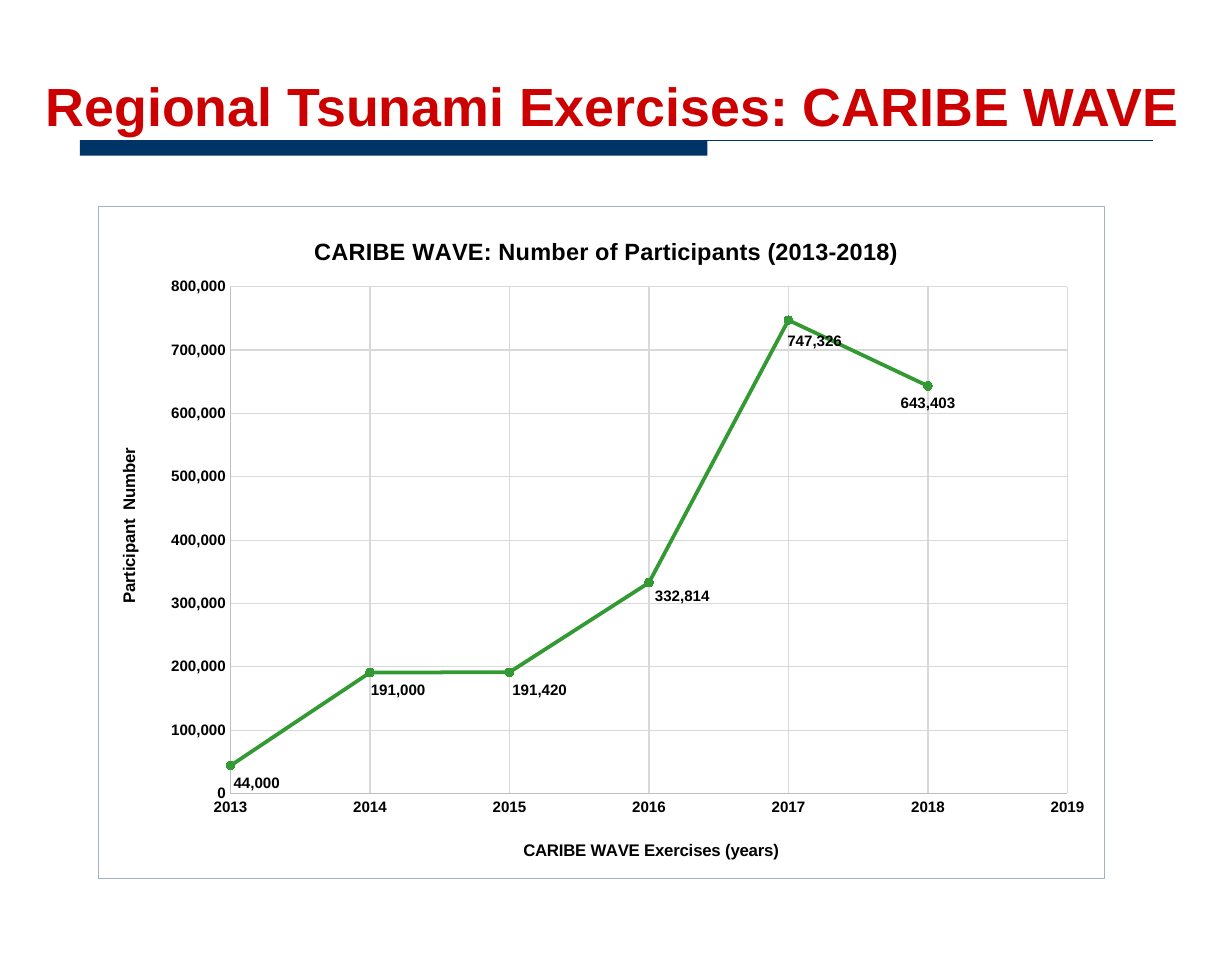
from lxml import etree
from pptx import Presentation
from pptx.chart.data import XyChartData
from pptx.dml.color import RGBColor
from pptx.enum.chart import XL_CHART_TYPE as ChartType, XL_LABEL_POSITION as LabelPosition
from pptx.enum.chart import XL_MARKER_STYLE as MarkerStyle, XL_TICK_MARK as TickMark
from pptx.enum.shapes import MSO_CONNECTOR as Connector, MSO_SHAPE as Shape
from pptx.enum.text import MSO_ANCHOR as Anchor
from pptx.oxml import parse_xml
from pptx.oxml.ns import nsdecls, qn
from pptx.util import Cm, Pt

NAVY, RED, BLACK = "003366", "CC0000", "000000"
GREEN, BRIGHT_GREEN = "339933", "009900"
AXIS_GREY, GRID_GREY, FRAME_GREY = "BFBFBF", "D9D9D9", "A3B2C1"

# year, participants, label shift as a share of the chart, marker colour
EXERCISES = [
    (2013, 44000, (0.026, 0), GREEN),
    (2014, 191000, (0.028, 0), GREEN),
    (2015, 191420, (0.03, 0), BRIGHT_GREEN),
    (2016, 332814, (0.033, -0.006), BRIGHT_GREEN),
    (2017, 747326, (0.026, 0.006), BRIGHT_GREEN),
    (2018, 643403, (0, 0), GREEN),
]


def rgb(value):
    return RGBColor.from_string(value)


def layout_xml(x, y, size=None, edge=True):
    """Manual chart layout in shares of the chart; size also fixes the inner plot area."""
    target = '<c:layoutTarget val="inner"/>' if size else ""
    modes = '<c:xMode val="edge"/><c:yMode val="edge"/>' if edge else ""
    extent = f'<c:w val="{size[0]}"/><c:h val="{size[1]}"/>' if size else ""
    return parse_xml(
        f'<c:layout {nsdecls("c")}><c:manualLayout>{target}{modes}'
        f'<c:x val="{x}"/><c:y val="{y}"/>{extent}</c:manualLayout></c:layout>')


def set_layout(element, position, layout):
    for old in element.findall(qn("c:layout")):
        element.remove(old)
    element.insert(position, layout)


class SlideBuilder:
    font_name = "Arial"

    def __init__(self, slide):
        self.slide = slide

    def style_font(self, font, size, color=BLACK):
        font.name, font.size, font.bold = self.font_name, Pt(size), True
        font.color.rgb = rgb(color)

    def style_line(self, line, color, width=0.75):
        line.color.rgb = rgb(color)
        line.width = Pt(width)

    def heading(self, wording, left, top, width, height):
        box = self.slide.shapes.add_textbox(Cm(left), Cm(top), Cm(width), Cm(height))
        frame = box.text_frame
        frame.word_wrap = True
        frame.vertical_anchor = Anchor.BOTTOM
        paragraph = frame.paragraphs[0]
        paragraph.line_spacing = 1.1
        run = paragraph.add_run()
        run.text = wording
        self.style_font(run.font, 32, RED)

    def bar(self, left, top, width, height):
        bar = self.slide.shapes.add_shape(
            Shape.RECTANGLE, Cm(left), Cm(top), Cm(width), Cm(height))
        bar.shadow.inherit = False
        bar.fill.solid()
        bar.fill.fore_color.rgb = rgb(NAVY)
        bar.line.fill.background()

    def rule(self, left, top, right):
        rule = self.slide.shapes.add_connector(
            Connector.STRAIGHT, Cm(left), Cm(top), Cm(right), Cm(top))
        self.style_line(rule.line, NAVY)
        etree.SubElement(rule._element.spPr, qn("a:effectLst"))

    def chart_title(self, owner, wording, size, x, y, rotation=0):
        """Title of a chart or an axis, with its top left corner at x, y."""
        owner.has_title = True
        title = owner.chart_title if hasattr(owner, "chart_title") else owner.axis_title
        frame = title.text_frame
        run = frame.paragraphs[0].add_run()
        run.text = wording
        self.style_font(run.font, size)
        frame._txBody.bodyPr.set("rot", str(rotation * 60000))
        set_layout(title._element, 1, layout_xml(x, y))

    def axis(self, axis, low, high, step, number_format):
        axis.minimum_scale, axis.maximum_scale, axis.major_unit = low, high, step
        axis.major_tick_mark = axis.minor_tick_mark = TickMark.NONE
        axis.has_major_gridlines = True
        self.style_line(axis.major_gridlines.format.line, GRID_GREY)
        self.style_line(axis.format.line, AXIS_GREY)
        labels = axis.tick_labels
        labels.number_format, labels.number_format_is_linked = number_format, False
        self.style_font(labels.font, 9)

    def marker(self, marker, color):
        marker.style, marker.size = MarkerStyle.CIRCLE, 5
        marker.format.fill.solid()
        marker.format.fill.fore_color.rgb = rgb(color)
        self.style_line(marker.format.line, color)

    def participants_chart(self, left, top, width, height):
        data = XyChartData(number_format="#,##0")
        participants = data.add_series("Participants")
        for year, count, _, _ in EXERCISES:
            participants.add_data_point(year, count)
        chart = self.slide.shapes.add_chart(
            ChartType.XY_SCATTER_LINES, Cm(left), Cm(top), Cm(width), Cm(height), data).chart
        chart.has_legend = False
        self.style_font(chart.font, 10)
        space = chart._chartSpace
        space.find(qn("c:chart")).addnext(parse_xml(
            f'<c:spPr {nsdecls("c", "a")}><a:solidFill><a:srgbClr val="FFFFFF"/></a:solidFill>'
            f'<a:ln w="9525"><a:solidFill><a:srgbClr val="{FRAME_GREY}"/></a:solidFill></a:ln>'
            '</c:spPr>'))
        plot_area = space.find(qn("c:chart")).find(qn("c:plotArea"))
        set_layout(plot_area, 0, layout_xml(0.131, 0.12, (0.832, 0.754)))

        years, counts = chart.category_axis, chart.value_axis
        self.axis(years, 2013, 2019, 1, "0")
        self.axis(counts, 0, 800000, 100000, "#,##0")
        self.chart_title(chart, "CARIBE WAVE: Number of Participants (2013-2018)", 14, 0.21, 0.038)
        self.chart_title(years, "CARIBE WAVE Exercises (years)", 10, 0.419, 0.937)
        self.chart_title(counts, "Participant  Number", 10, 0.016, 0.356, rotation=-90)

        plot = chart.plots[0]
        plot.vary_by_categories = False
        series = plot.series[0]
        self.style_line(series.format.line, GREEN, 2.25)
        self.marker(series.marker, BRIGHT_GREEN)
        for index, (_, _, shift, color) in enumerate(EXERCISES):
            point = series.points[index]
            self.marker(point.marker, color)
            self.style_line(point.format.line, GREEN, 2.25)
            self.style_font(point.data_label.font, 9)
            point.data_label.position = LabelPosition.BELOW
        for label, exercise in zip(series._element.iter(qn("c:dLbl")), EXERCISES):
            if any(exercise[2]):
                set_layout(label, 1, layout_xml(*exercise[2], edge=False))


def main():
    deck = Presentation()
    deck.slide_width, deck.slide_height = Cm(25.88), Cm(20.32)
    builder = SlideBuilder(deck.slides.add_slide(deck.slide_layouts[6]))
    builder.bar(1.68, 2.95, 13.18, 0.32)
    builder.rule(1.68, 2.95, 24.21)
    builder.heading("Regional Tsunami Exercises: CARIBE WAVE", 0.71, 0.74, 24.71, 2.26)
    builder.participants_chart(2.06, 4.32, 21.16, 14.15)
    deck.save("out.pptx")


if __name__ == "__main__":
    main()
